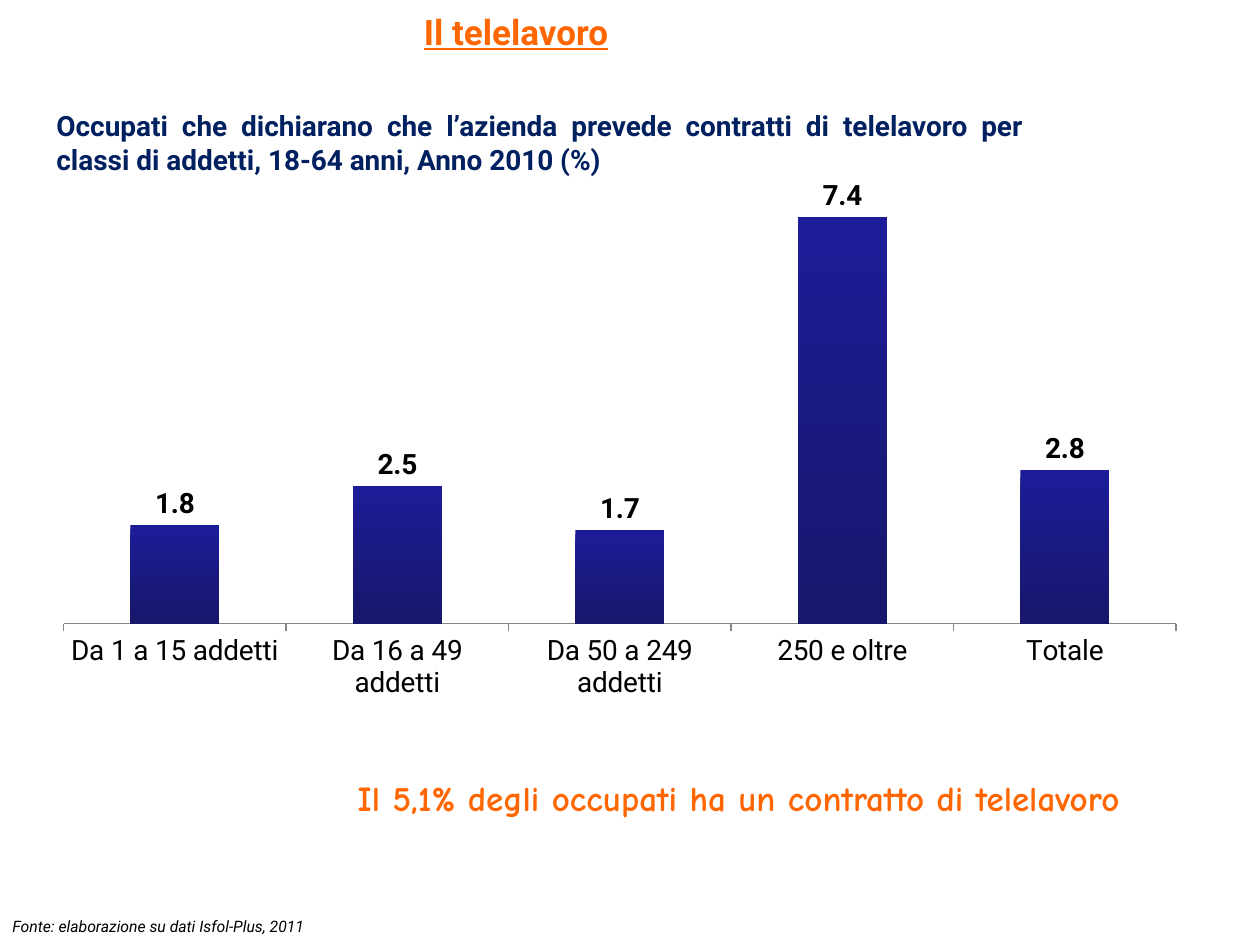
from dataclasses import dataclass

from lxml import etree
from pptx import Presentation
from pptx.chart.data import CategoryChartData
from pptx.dml.color import RGBColor
from pptx.enum.chart import XL_CHART_TYPE, XL_LABEL_POSITION, XL_TICK_MARK
from pptx.enum.text import MSO_ANCHOR, MSO_AUTO_SIZE, PP_ALIGN
from pptx.oxml.ns import qn
from pptx.util import Pt

COLUMN = XL_CHART_TYPE.COLUMN_CLUSTERED
ABOVE = XL_LABEL_POSITION.OUTSIDE_END
TICK_OUT, TICK_NONE = XL_TICK_MARK.OUTSIDE, XL_TICK_MARK.NONE
MIDDLE, TOP = MSO_ANCHOR.MIDDLE, MSO_ANCHOR.TOP
GROW = MSO_AUTO_SIZE.SHAPE_TO_FIT_TEXT
LEFT, CENTER, JUSTIFY = PP_ALIGN.LEFT, PP_ALIGN.CENTER, PP_ALIGN.JUSTIFY


@dataclass(frozen=True)
class Theme:
    font: str = "Roboto"
    hand: str = "Comic Neue"
    orange: str = "FF6600"
    navy: str = "002060"
    black: str = "000000"
    axis: str = "868686"
    bar_top: str = "1C1C98"
    bar_end: str = "17176B"
    title: int = 20
    body: int = 16
    chart: int = 14
    note: int = 9


THEME = Theme()
FORMAT = "####.0"
SHARES = {
    "Da 1 a 15 addetti": 1.8,
    "Da 16 a 49 addetti": 2.5,
    "Da 50 a 249 addetti": 1.7,
    "250 e oltre": 7.4,
    "Totale": 2.8,
}


def color(code):
    return RGBColor.from_string(code)


def style(font, size, code, name=THEME.font, bold=False):
    font.name, font.size, font.bold = name, Pt(size), bold
    font.color.rgb = color(code)


def add_text(slide, box, text, size, code, name=THEME.font, bold=False,
             italic=False, line=False, align=LEFT, anchor=MIDDLE, wrap=True):
    frame = slide.shapes.add_textbox(*map(Pt, box)).text_frame
    frame.word_wrap, frame.auto_size = wrap, GROW
    frame.vertical_anchor = anchor
    para = frame.paragraphs[0]
    para.alignment = align
    run = para.add_run()
    run.text = text
    style(run.font, size, code, name, bold)
    run.font.italic, run.font.underline = italic, line


def place_plot(chart, x, y, w, h):
    """Fix the inner plot area as fractions of the chart."""
    area = chart._chartSpace.chart.plotArea
    for old in area.findall(qn("c:layout")):
        area.remove(old)
    layout = etree.Element(qn("c:layout"))
    area.insert(0, layout)
    manual = etree.SubElement(layout, qn("c:manualLayout"))
    parts = {"layoutTarget": "inner", "xMode": "edge", "yMode": "edge",
             "x": x, "y": y, "w": w, "h": h}
    for tag, value in parts.items():
        etree.SubElement(manual, qn(f"c:{tag}")).set("val", str(value))


def add_bars(slide, box, shares):
    data = CategoryChartData(number_format=FORMAT)
    data.categories = list(shares)
    data.add_series("Series 1", list(shares.values()))
    chart = slide.shapes.add_chart(COLUMN, *map(Pt, box), data).chart
    chart.has_legend = chart.has_title = False
    style(chart.font, THEME.chart, THEME.black)
    place_plot(chart, 0.017, 0.016, 0.967, 0.777)

    # Axes
    axis = chart.category_axis
    axis.major_tick_mark, axis.minor_tick_mark = TICK_OUT, TICK_NONE
    axis.format.line.color.rgb = color(THEME.axis)
    axis.format.line.width = Pt(0.75)
    style(axis.tick_labels.font, THEME.body, THEME.black)
    scale = chart.value_axis
    scale.minimum_scale, scale.maximum_scale = 0, 8
    scale.has_major_gridlines = scale.visible = False

    # Bars with a vertical gradient
    plot = chart.plots[0]
    plot.gap_width, plot.vary_by_categories = 150, False
    bars = plot.series[0]
    bars.invert_if_negative = False
    fill = bars.format.fill
    fill.gradient()
    fill.gradient_angle = 270
    for stop, code in zip(fill.gradient_stops, (THEME.bar_top, THEME.bar_end)):
        stop.color.rgb = color(code)

    # Value labels
    labels = bars.data_labels
    labels.show_value, labels.position = True, ABOVE
    labels.number_format, labels.number_format_is_linked = FORMAT, False
    style(labels.font, THEME.body, THEME.black, bold=True)


def main():
    deck = Presentation()
    deck.slide_width, deck.slide_height = Pt(720), Pt(540)
    slide = deck.slides.add_slide(deck.slide_layouts[6])

    # Headings
    add_text(slide, (0, 2, 590, 32), "Il telelavoro", THEME.title,
             THEME.orange, bold=True, line=True, align=CENTER)
    add_text(slide, (25.2, 58.3, 566.6, 46),
             "Occupati che dichiarano che l’azienda prevede contratti di "
             "telelavoro per classi di addetti, 18-64 anni, Anno 2010 (%)",
             THEME.body, THEME.navy, bold=True, align=JUSTIFY)

    # Source
    add_text(slide, (0, 520, 217.4, 18),
             "Fonte: elaborazione su dati Isfol-Plus, 2011",
             THEME.note, THEME.black, italic=True, wrap=False)

    # Chart and key message
    add_bars(slide, (25.2, 100, 657.4, 323.3), SHARES)
    add_text(slide, (197.3, 440, 522.7, 32),
             "Il 5,1% degli occupati ha un contratto di telelavoro",
             THEME.title, THEME.orange, THEME.hand, bold=True,
             anchor=TOP, wrap=False)

    deck.save("out.pptx")


if __name__ == "__main__":
    main()
